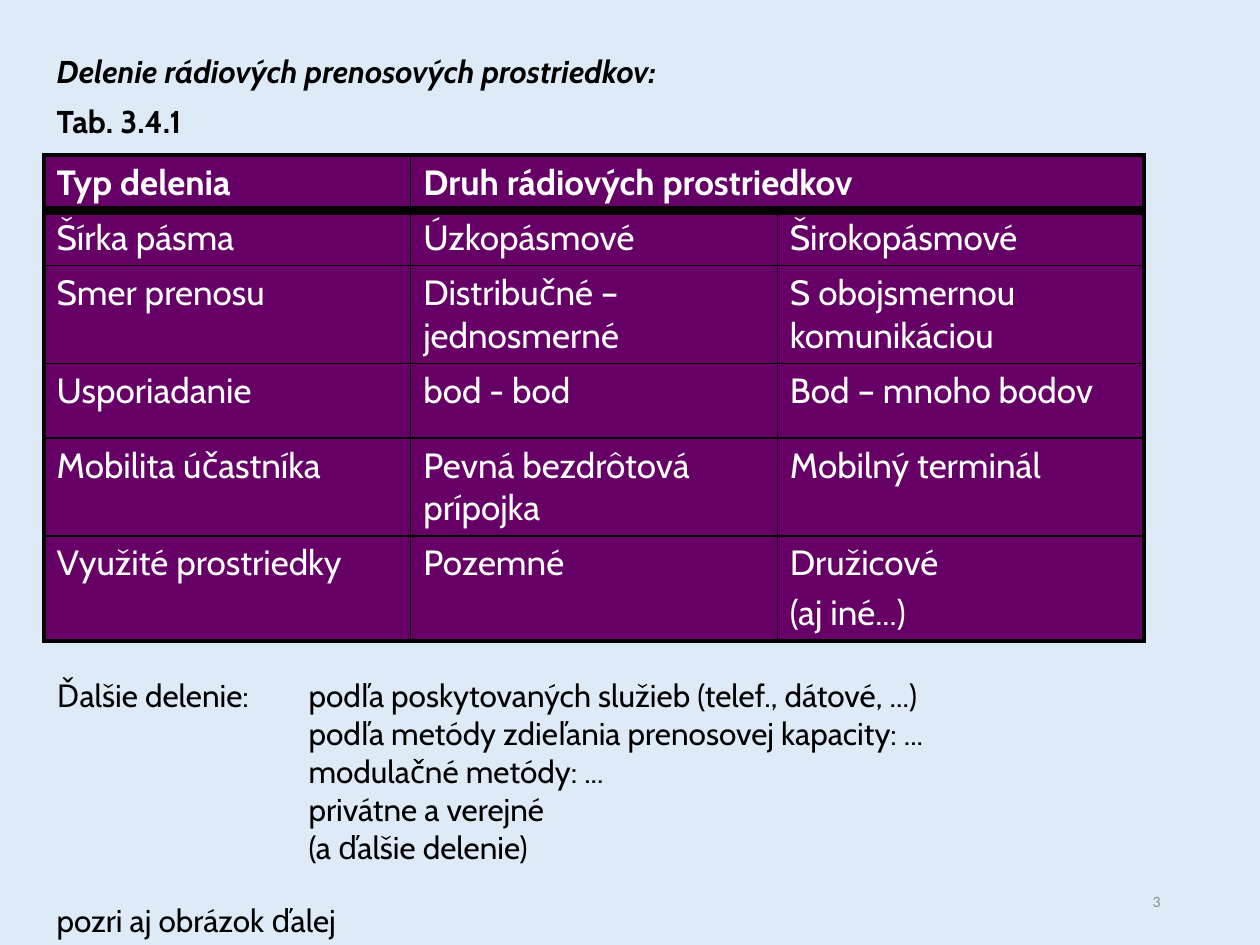
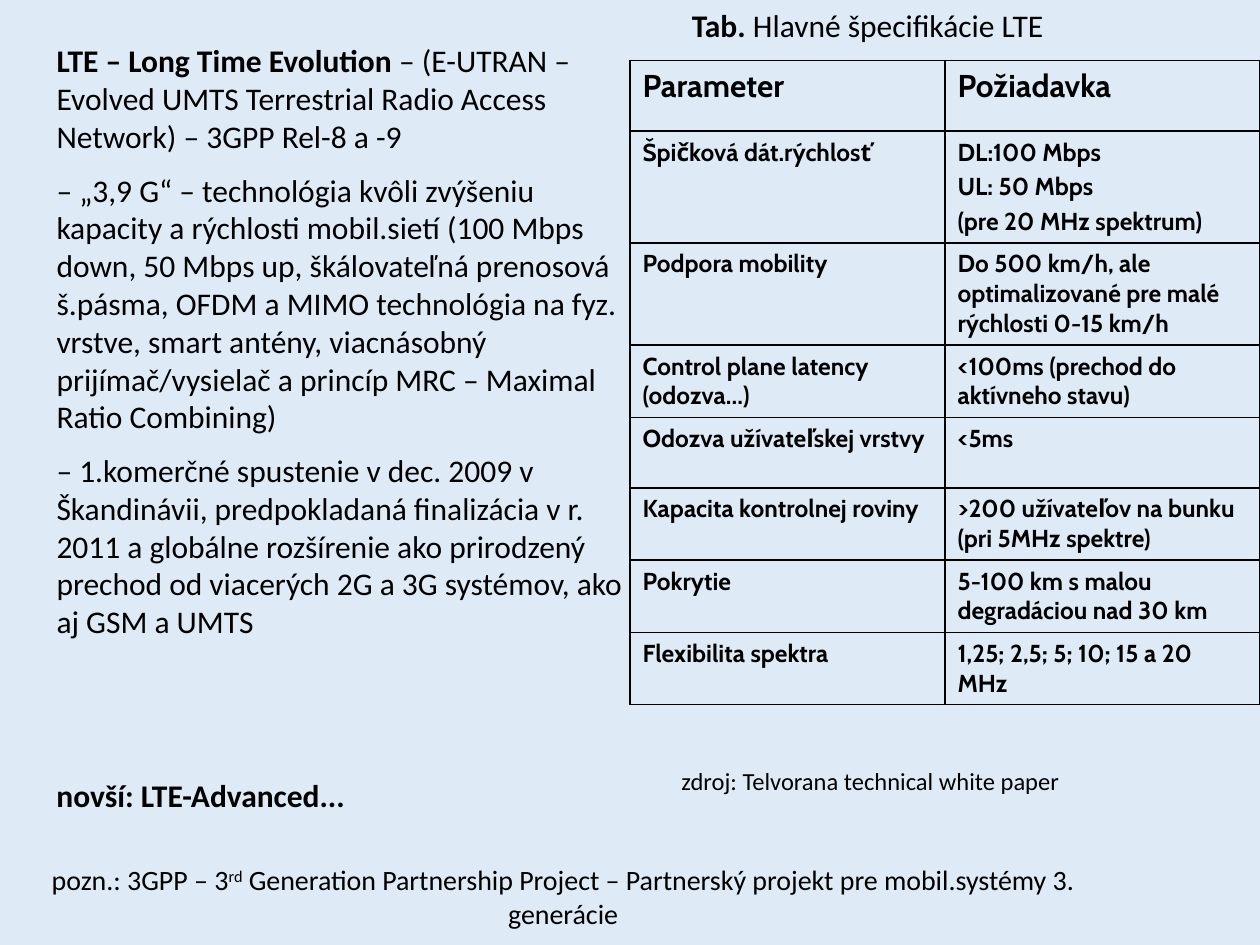
"""Builds two slides on radio transmission media and the LTE specification."""
from dataclasses import dataclass
from typing import NamedTuple

from lxml.etree import SubElement
from pptx import Presentation
from pptx.dml.color import RGBColor
from pptx.enum.text import MSO_ANCHOR, MSO_AUTO_SIZE, PP_ALIGN
from pptx.oxml.ns import qn
from pptx.util import Pt

EMU_PER_PX = 9144
COLORS = {
    "background": "DEEBF7",
    "text": "000000",
    "number": "8C8C8C",
    "line": "000000",
    "purple": "660066",
    "white": "FFFFFF",
}
TITLE_ONLY = 5
TAB_STOP = 200


class Span(NamedTuple):
    text: str
    bold: bool | None = None
    superscript: bool = False


class Area(NamedTuple):
    left: int
    top: int
    width: int
    height: int


@dataclass(frozen=True)
class TextStyle:
    font: str
    size: int
    color: str = "text"
    bold: bool = False
    italic: bool = False
    align: PP_ALIGN = PP_ALIGN.LEFT
    spacing: float = 0.5
    tabbed: bool = False


@dataclass(frozen=True)
class TextBlock:
    area: Area
    style: TextStyle
    paras: tuple
    anchor: MSO_ANCHOR = MSO_ANCHOR.TOP


@dataclass(frozen=True)
class Grid:
    left: int
    top: int
    column_width: int
    row_heights: tuple
    rows: tuple
    header: TextStyle
    body: TextStyle
    fill: str | None = None
    outer_line: float = 1
    header_line: float = 1


CABIN = TextStyle("Cabin", 18)
CABIN_BOLD = TextStyle("Cabin", 18, bold=True)
CALIBRI = TextStyle("Calibri", 18)

MEDIA_TITLE = TextBlock(
    Area(35, 36, 748, 40),
    TextStyle("Cabin", 18, bold=True, italic=True),
    ("Delenie rádiových prenosových prostriedkov:",),
)
MEDIA_BLOCKS = (
    TextBlock(
        Area(706, 695, 225, 40),
        TextStyle("Calibri", 9, "number", align=PP_ALIGN.RIGHT),
        ("3",),
        MSO_ANCHOR.MIDDLE,
    ),
    TextBlock(Area(35, 710, 835, 40), CABIN, ("pozri aj obrázok ďalej",)),
    TextBlock(
        Area(35, 532, 882, 160),
        TextStyle("Cabin", 18, spacing=0, tabbed=True),
        (
            "Ďalšie delenie:\tpodľa poskytovaných služieb (telef., dátové, ...)",
            "\tpodľa metódy zdieľania prenosovej kapacity: ...",
            "\tmodulačné metódy: ...",
            "\tprivátne a verejné",
            "\t(a ďalšie delenie)",
        ),
    ),
    TextBlock(Area(35, 76, 205, 40), CABIN_BOLD, ("Tab. 3.4.1",)),
)
MEDIA_GRID = Grid(
    35, 123, 291, (43, 43, 77, 59, 77, 83),
    (
        ("Typ delenia", "Druh rádiových prostriedkov", None),
        ("Šírka pásma", "Úzkopásmové", "Širokopásmové"),
        ("Smer prenosu", "Distribučné – jednosmerné", "S obojsmernou komunikáciou"),
        ("Usporiadanie", "bod - bod", "Bod – mnoho bodov"),
        ("Mobilita účastníka", "Pevná bezdrôtová prípojka", "Mobilný terminál"),
        ("Využité prostriedky", "Pozemné", "Družicové\n(aj iné...)"),
    ),
    header=TextStyle("Cabin", 20, "white", bold=True, spacing=0.2),
    body=TextStyle("Cabin", 20, "white", spacing=0.2),
    fill="purple",
    outer_line=2.25,
    header_line=6,
)

LTE_TITLE = TextBlock(
    Area(539, 0, 461, 40),
    CALIBRI,
    ((Span("Tab. ", True), Span("Hlavné špecifikácie LTE")),),
)
LTE_BLOCKS = (
    TextBlock(
        Area(35, 28, 472, 495),
        CALIBRI,
        (
            (
                Span("LTE – Long Time Evolution", True),
                Span(" – (E-UTRAN – Evolved UMTS Terrestrial Radio Access Network)"
                     " – 3GPP Rel-8 a -9"),
            ),
            "– „3,9 G“ – technológia kvôli zvýšeniu kapacity a rýchlosti mobil.sietí "
            "(100 Mbps down, 50 Mbps up, škálovateľná prenosová š.pásma, OFDM a MIMO "
            "technológia na fyz. vrstve, smart antény, viacnásobný prijímač/vysielač "
            "a princíp MRC – Maximal Ratio Combining)",
            "– 1.komerčné spustenie v dec. 2009 v Škandinávii, predpokladaná finalizácia "
            "v r. 2011 a globálne rozšírenie ako prirodzený prechod od viacerých 2G a 3G "
            "systémov, ako aj GSM a UMTS",
        ),
    ),
    TextBlock(
        Area(531, 603, 449, 33),
        TextStyle("Calibri", 14),
        ("zdroj: Telvorana technical white paper",),
    ),
    TextBlock(
        Area(0, 680, 894, 64),
        TextStyle("Calibri", 16, align=PP_ALIGN.CENTER),
        (
            (
                Span("pozn.: 3GPP – 3"),
                Span("rd", superscript=True),
                Span(" Generation Partnership Project – Partnerský projekt pre "
                     "mobil.systémy 3. generácie"),
            ),
        ),
    ),
    TextBlock(
        Area(35, 611, 480, 40),
        TextStyle("Calibri", 18, bold=True),
        ("novší: LTE-Advanced...",),
    ),
)
LTE_GRID = Grid(
    500, 48, 250, (56,) * 8,
    (
        ("Parameter", "Požiadavka"),
        ("Špičková dát.rýchlosť", "DL:100 Mbps\nUL: 50 Mbps\n(pre 20 MHz spektrum)"),
        ("Podpora mobility", "Do 500 km/h, ale optimalizované pre malé rýchlosti 0-15 km/h"),
        ("Control plane latency (odozva...)", "<100ms (prechod do aktívneho stavu)"),
        ("Odozva užívateľskej vrstvy", "<5ms"),
        ("Kapacita kontrolnej roviny", ">200 užívateľov na bunku (pri 5MHz spektre)"),
        ("Pokrytie", "5-100 km s malou degradáciou nad 30 km"),
        ("Flexibilita spektra", "1,25; 2,5; 5; 10; 15 a 20 MHz"),
    ),
    header=CABIN_BOLD,
    body=TextStyle("Cabin", 14, bold=True, spacing=0.2),
)


def px(length: int) -> int:
    return length * EMU_PER_PX


def rgb(name: str) -> RGBColor:
    return RGBColor.from_string(COLORS[name])


def write_paragraphs(frame, paras: tuple, style: TextStyle) -> None:
    for index, spans in enumerate(paras):
        para = frame.add_paragraph() if index else frame.paragraphs[0]
        para.alignment = style.align
        if index and style.spacing:
            para.space_before = Pt(round(style.size * style.spacing, 1))
        if style.tabbed:
            stops = SubElement(para._p.get_or_add_pPr(), qn("a:tabLst"))
            SubElement(stops, qn("a:tab"), pos=str(px(TAB_STOP)), algn="l")
        font = para.font
        font.name, font.size = style.font, Pt(style.size)
        font.bold, font.italic = style.bold, style.italic
        font.color.rgb = rgb(style.color)
        for span in (Span(spans),) if isinstance(spans, str) else spans:
            run = para.add_run()
            run.text = span.text
            if span.bold is not None:
                run.font.bold = span.bold
            if span.superscript:
                run._r.get_or_add_rPr().set("baseline", "30000")


def fill_block(box, block: TextBlock) -> None:
    box.left, box.top, box.width, box.height = map(px, block.area)
    frame = box.text_frame
    frame.word_wrap = True
    frame.auto_size = MSO_AUTO_SIZE.NONE
    frame.vertical_anchor = block.anchor
    write_paragraphs(frame, block.paras, block.style)


def draw_borders(cell, widths: dict) -> None:
    properties = cell._tc.get_or_add_tcPr()
    for side, width in widths.items():
        line = SubElement(properties, qn(f"a:ln{side}"), w=str(Pt(width)))
        paint = SubElement(line, qn("a:solidFill"))
        SubElement(paint, qn("a:srgbClr"), val=COLORS["line"])


def draw_grid(page, grid: Grid) -> None:
    row_count, column_count = len(grid.rows), len(grid.rows[0])
    table = page.shapes.add_table(
        row_count, column_count, px(grid.left), px(grid.top),
        px(grid.column_width * column_count), px(sum(grid.row_heights)),
    ).table
    table.first_row = table.horz_banding = False
    for column in table.columns:
        column.width = px(grid.column_width)
    for row, height in zip(table.rows, grid.row_heights):
        row.height = px(height)
    for row, texts in enumerate(grid.rows):
        for column, text in enumerate(texts):
            cell = table.cell(row, column)
            if text is None:
                table.cell(row, column - 1).merge(cell)
            else:
                style = grid.body if row else grid.header
                write_paragraphs(cell.text_frame, tuple(text.split("\n")), style)
            at_right = all(later is None for later in texts[column + 1:])
            inner_top = grid.header_line if row == 1 else 1
            inner_bottom = grid.header_line if row == 0 else 1
            draw_borders(cell, {
                "L": 1 if column else grid.outer_line,
                "R": grid.outer_line if at_right else 1,
                "T": inner_top if row else grid.outer_line,
                "B": grid.outer_line if row == row_count - 1 else inner_bottom,
            })
            if grid.fill:
                cell.fill.solid()
                cell.fill.fore_color.rgb = rgb(grid.fill)
            else:
                cell.fill.background()


def add_page(deck, title: TextBlock, blocks: tuple, grid: Grid) -> None:
    page = deck.slides.add_slide(deck.slide_layouts[TITLE_ONLY])
    fill_block(page.shapes.title, title)
    draw_grid(page, grid)
    for block in blocks:
        fill_block(page.shapes.add_textbox(0, 0, 0, 0), block)


def main() -> None:
    deck = Presentation()
    deck.slide_width, deck.slide_height = px(1000), px(750)
    background = deck.slide_master.background.fill
    background.solid()
    background.fore_color.rgb = rgb("background")
    add_page(deck, MEDIA_TITLE, MEDIA_BLOCKS, MEDIA_GRID)
    add_page(deck, LTE_TITLE, LTE_BLOCKS, LTE_GRID)
    deck.save("out.pptx")


if __name__ == "__main__":
    main()
